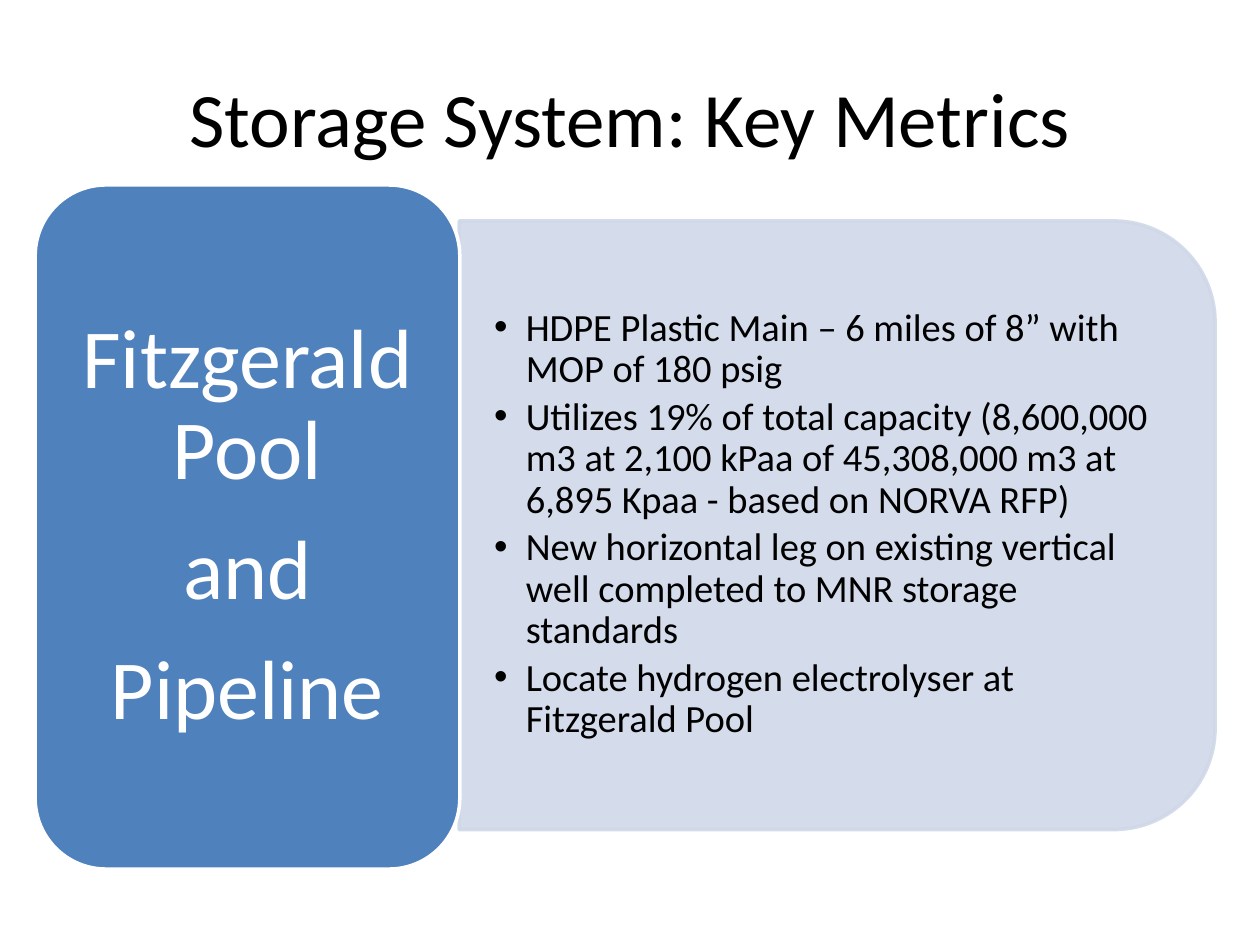
from lxml.etree import SubElement
from pptx import Presentation
from pptx.dml.color import RGBColor as Rgb
from pptx.enum.shapes import MSO_SHAPE as Kind
from pptx.enum.text import MSO_ANCHOR as Anchor, MSO_AUTO_SIZE as Fit, PP_ALIGN as Align
from pptx.oxml.ns import qn
from pptx.util import Cm, Pt

COLORS = {"text": "000000", "label": "FFFFFF", "blue": "4F81BD", "pale": "D0D8E8"}

POINTS = [
    "HDPE Plastic Main – 6 miles of 8” with MOP of 180 psig",
    "Utilizes 19% of total capacity (8,600,000 m3 at 2,100 kPaa of "
    "45,308,000 m3 at 6,895 Kpaa - based on NORVA RFP)",
    "New horizontal leg on existing vertical well completed to MNR storage standards",
    "Locate hydrogen electrolyser at Fitzgerald Pool",
]
LABEL = ["Fitzgerald Pool", "and", "Pipeline"]


class Deck:
    font = "Calibri"

    def __init__(self):
        self.prs = Presentation()
        self.prs.slide_width, self.prs.slide_height = Cm(25.4), Cm(19.05)
        self.slide = self.prs.slides.add_slide(self.prs.slide_layouts[1])

    def place(self, item, box):
        item.left, item.top, item.width, item.height = map(Cm, box)

    def text(self, shape, lines, size, color, align, after=0, space=1.0, pad=(0.25, 0.13)):
        frame = shape.text_frame
        frame.word_wrap, frame.auto_size = True, Fit.NONE
        frame.vertical_anchor = Anchor.MIDDLE
        frame.margin_left = frame.margin_right = Cm(pad[0])
        frame.margin_top = frame.margin_bottom = Cm(pad[1])
        for i, line in enumerate(lines):
            para = frame.add_paragraph() if i else frame.paragraphs[0]
            para.alignment, para.line_spacing = align, space
            para.space_before, para.space_after = Pt(0), Pt(after)
            run = para.add_run()
            run.text = line
            run.font.name, run.font.size = self.font, Pt(size)
            run.font.color.rgb = Rgb.from_string(COLORS[color])

    def title(self, line, box):
        title = self.slide.shapes.title
        self.place(title, box)
        self.text(title, [line], 44, "text", Align.CENTER)

    def bullets(self, lines, box):
        body = self.slide.placeholders[1]
        self.place(body, box)
        self.text(body, lines, 22, "text", Align.LEFT, 3.3, 0.9, (0.69, 0.35))
        for para in body.text_frame.paragraphs:
            props = para._p.get_or_add_pPr()
            props.set("marL", str(Cm(0.64)))
            props.set("indent", str(-Cm(0.64)))
        # Bring the list in front of the panel
        body.element.getparent().append(body.element)

    def shape(self, kind, box, fill, line, turn=0, alpha=None):
        shape = self.slide.shapes.add_shape(kind, *map(Cm, box))
        shape.shadow.inherit = False
        shape.rotation = turn
        shape.fill.solid()
        shape.fill.fore_color.rgb = Rgb.from_string(COLORS[fill])
        shape.line.color.rgb = Rgb.from_string(COLORS[line])
        shape.line.width = Pt(2)
        if alpha:
            for tone in shape.element.spPr.iter(qn("a:srgbClr")):
                SubElement(tone, qn("a:alpha")).set("val", str(alpha * 1000))
        return shape


def main():
    deck = Deck()

    # Title
    deck.title("Storage System: Key Metrics", (1.27, 0.76, 22.86, 3.18))

    # Pale panel with the list
    deck.shape(Kind.ROUND_2_SAME_RECTANGLE, (10.74, 2.97, 12.27, 15.24),
               "pale", "pale", turn=90, alpha=90)
    deck.bullets(POINTS, (9.27, 5.05, 14.63, 11.05))

    # Blue label
    card = deck.shape(Kind.ROUNDED_RECTANGLE, (0.71, 3.73, 8.56, 13.79), "blue", "label")
    deck.text(card, LABEL, 48, "label", Align.CENTER, 16.8, 0.9, (0.51, 0.25))

    deck.prs.save("out.pptx")


if __name__ == "__main__":
    main()
